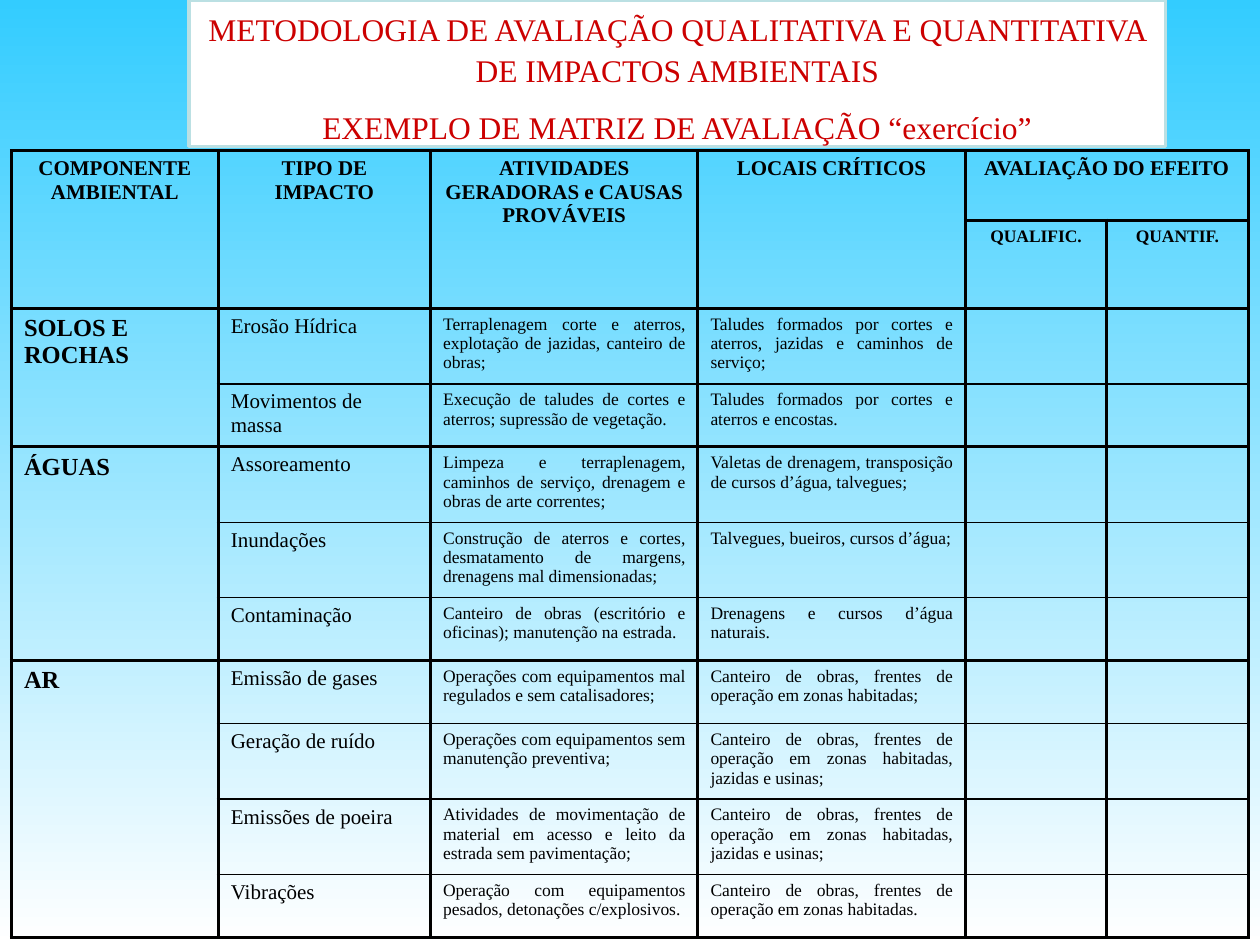
"""Builds the environmental impact assessment matrix slide."""
from dataclasses import dataclass
from itertools import accumulate

from lxml import etree
from pptx import Presentation, util as u
from pptx.dml.color import RGBColor
from pptx.enum import text
from pptx.oxml.ns import qn

ALIGN = text.PP_ALIGN


@dataclass(frozen=True)
class Theme:
    """Colours, font and type sizes of the slide."""
    font: str = "Times New Roman"
    sky: str = "33CCFF"
    white: str = "FFFFFF"
    frame: str = "BBE0E3"
    red: str = "CC0000"
    black: str = "000000"
    title: int = 18
    component: int = 14
    impact: int = 12
    detail: int = 10
    thick: int = 2
    thin: int = 1


TITLE = (
    "METODOLOGIA DE AVALIAÇÃO QUALITATIVA E QUANTITATIVA DE IMPACTOS AMBIENTAIS",
    "EXEMPLO DE MATRIZ DE AVALIAÇÃO “exercício”",
)
HEADERS = ("COMPONENTE AMBIENTAL", "TIPO DE IMPACTO",
           "ATIVIDADES GERADORAS e CAUSAS PROVÁVEIS", "LOCAIS CRÍTICOS")
EFFECT = "AVALIAÇÃO DO EFEITO"
RATINGS = ("QUALIFIC.", "QUANTIF.")
GROUPS = (
    (("SOLOS E", "ROCHAS"), (
        ("Erosão Hídrica",
         "Terraplenagem corte e aterros, explotação de jazidas, canteiro de obras;",
         "Taludes formados por cortes e aterros, jazidas e caminhos de serviço;"),
        ("Movimentos de massa",
         "Execução de taludes de cortes e aterros; supressão de vegetação.",
         "Taludes formados por cortes e aterros e encostas."),
    )),
    (("ÁGUAS",), (
        ("Assoreamento",
         "Limpeza e terraplenagem, caminhos de serviço, drenagem e obras de arte correntes;",
         "Valetas de drenagem, transposição de cursos d’água, talvegues;"),
        ("Inundações",
         "Construção de aterros e cortes, desmatamento de margens, drenagens mal dimensionadas;",
         "Talvegues, bueiros, cursos d’água;"),
        ("Contaminação",
         "Canteiro de obras (escritório e oficinas); manutenção na estrada.",
         "Drenagens e cursos d’água naturais."),
    )),
    (("AR",), (
        ("Emissão de gases",
         "Operações com equipamentos mal regulados e sem catalisadores;",
         "Canteiro de obras, frentes de operação em zonas habitadas;"),
        ("Geração de ruído",
         "Operações com equipamentos sem manutenção preventiva;",
         "Canteiro de obras, frentes de operação em zonas habitadas, jazidas e usinas;"),
        ("Emissões de poeira",
         "Atividades de movimentação de material em acesso e leito da estrada sem pavimentação;",
         "Canteiro de obras, frentes de operação em zonas habitadas, jazidas e usinas;"),
        ("Vibrações",
         "Operação com equipamentos pesados, detonações c/explosivos.",
         "Canteiro de obras, frentes de operação em zonas habitadas."),
    )),
)
HEADER_ROWS = 2
COLUMN_WIDTHS = (4.17, 4.28, 5.39, 5.39, 2.85, 2.85)
TALL, SHORT = 1.52, 1.27
ROW_HEIGHTS = (1.4, 1.78, TALL, SHORT, TALL, TALL, SHORT, SHORT, TALL, TALL, SHORT)


class MatrixSlide:
    """Holds the style and the current slide."""

    def __init__(self, presentation, theme):
        """Adds a title-only slide to the presentation."""
        self.theme = theme
        self.slide = presentation.slides.add_slide(presentation.slide_layouts[5])

    def background(self):
        """Paints the vertical gradient."""
        fill = self.slide.background.fill
        fill.gradient()
        fill.gradient_angle = 270
        for stop, colour in zip(fill.gradient_stops, (self.theme.sky, self.theme.white)):
            stop.color.rgb = RGBColor.from_string(colour)

    def paragraphs(self, frame, lines, size, colour, align, bold=False):
        """Fills a text frame with one run per paragraph."""
        for index, line in enumerate(lines):
            paragraph = frame.add_paragraph() if index else frame.paragraphs[0]
            paragraph.alignment = align
            run = paragraph.add_run()
            run.text = line
            run.font.name = self.theme.font
            run.font.size = u.Pt(size)
            run.font.bold = bold
            run.font.color.rgb = RGBColor.from_string(colour)

    def title(self, lines, left, top, width, height):
        """Moves and formats the title placeholder."""
        shape = self.slide.shapes.title
        shape.left, shape.top, shape.width, shape.height = map(
            u.Cm, (left, top, width, height))
        shape.fill.solid()
        shape.fill.fore_color.rgb = RGBColor.from_string(self.theme.white)
        shape.line.color.rgb = RGBColor.from_string(self.theme.frame)
        shape.line.width = u.Pt(2)
        frame = shape.text_frame
        frame.word_wrap = True
        frame.auto_size = text.MSO_AUTO_SIZE.NONE
        frame.vertical_anchor = text.MSO_ANCHOR.TOP
        self.paragraphs(frame, lines, self.theme.title, self.theme.red, ALIGN.CENTER)
        for paragraph in frame.paragraphs:
            paragraph.space_before = u.Pt(self.theme.title / 2)
            paragraph.line_spacing = 1.09

    def table(self, left, top, widths, heights):
        """Adds an unstyled table."""
        table = self.slide.shapes.add_table(
            len(heights), len(widths), u.Cm(left), u.Cm(top),
            u.Cm(sum(widths)), u.Cm(sum(heights))).table
        table.first_row = table.horz_banding = False
        for column, width in zip(table.columns, widths):
            column.width = u.Cm(width)
        for row, height in zip(table.rows, heights):
            row.height = u.Cm(height)
        return table

    def border(self, cell, above, below):
        """Draws the four cell edges and clears the fill."""
        properties = cell._tc.get_or_add_tcPr()
        thick = self.theme.thick
        for edge, width in (("L", thick), ("R", thick), ("T", above), ("B", below)):
            line = etree.SubElement(properties, qn(f"a:ln{edge}"), w=str(u.Pt(width)))
            fill = etree.SubElement(line, qn("a:solidFill"))
            etree.SubElement(fill, qn("a:srgbClr"), val=self.theme.black)
        cell.fill.background()

    def rule(self, table, group_starts):
        """Rules the table, heavier around headers and groups."""
        heavy = {*range(HEADER_ROWS), *group_starts, len(table.rows)}
        for row in range(len(table.rows)):
            for column in range(len(table.columns)):
                above, below = (
                    self.theme.thick if column == 0 or edge in heavy else self.theme.thin
                    for edge in (row, row + 1))
                self.border(table.cell(row, column), above, below)

    def cell(self, table, row, column, lines, size, align=ALIGN.LEFT, bold=False, last=None):
        """Sets the text of a cell, merged up to the last one given."""
        cell = table.cell(row, column)
        if last:
            cell.merge(table.cell(*last))
        self.paragraphs(cell.text_frame, lines, size, self.theme.black, align, bold)

    def matrix(self, left, top):
        """Builds the assessment matrix."""
        theme = self.theme
        table = self.table(left, top, COLUMN_WIDTHS, ROW_HEIGHTS)
        starts = list(accumulate((len(rows) for _, rows in GROUPS), initial=HEADER_ROWS))
        self.rule(table, starts)
        for column, header in enumerate(HEADERS):
            self.cell(table, 0, column, [header], theme.impact, ALIGN.CENTER, True, (1, column))
        self.cell(table, 0, 4, [EFFECT], theme.impact, ALIGN.CENTER, True, (0, 5))
        for column, rating in enumerate(RATINGS, 4):
            self.cell(table, 1, column, [rating], theme.detail, ALIGN.CENTER, True)
        for start, (component, rows) in zip(starts, GROUPS):
            self.cell(table, start, 0, component, theme.component, bold=True,
                      last=(start + len(rows) - 1, 0))
            for row, (impact, *details) in enumerate(rows, start):
                self.cell(table, row, 1, [impact], theme.impact)
                for column, detail in enumerate(details, 2):
                    self.cell(table, row, column, [detail], theme.detail, ALIGN.JUSTIFY)


def main():
    """Builds and saves the presentation."""
    presentation = Presentation()
    presentation.slide_width, presentation.slide_height = u.Cm(25.4), u.Cm(19.05)
    slide = MatrixSlide(presentation, Theme())
    slide.background()
    slide.title(TITLE, 3.81, 0, 19.69, 2.95)
    slide.matrix(0.23, 3.04)
    presentation.save("out.pptx")


if __name__ == "__main__":
    main()
